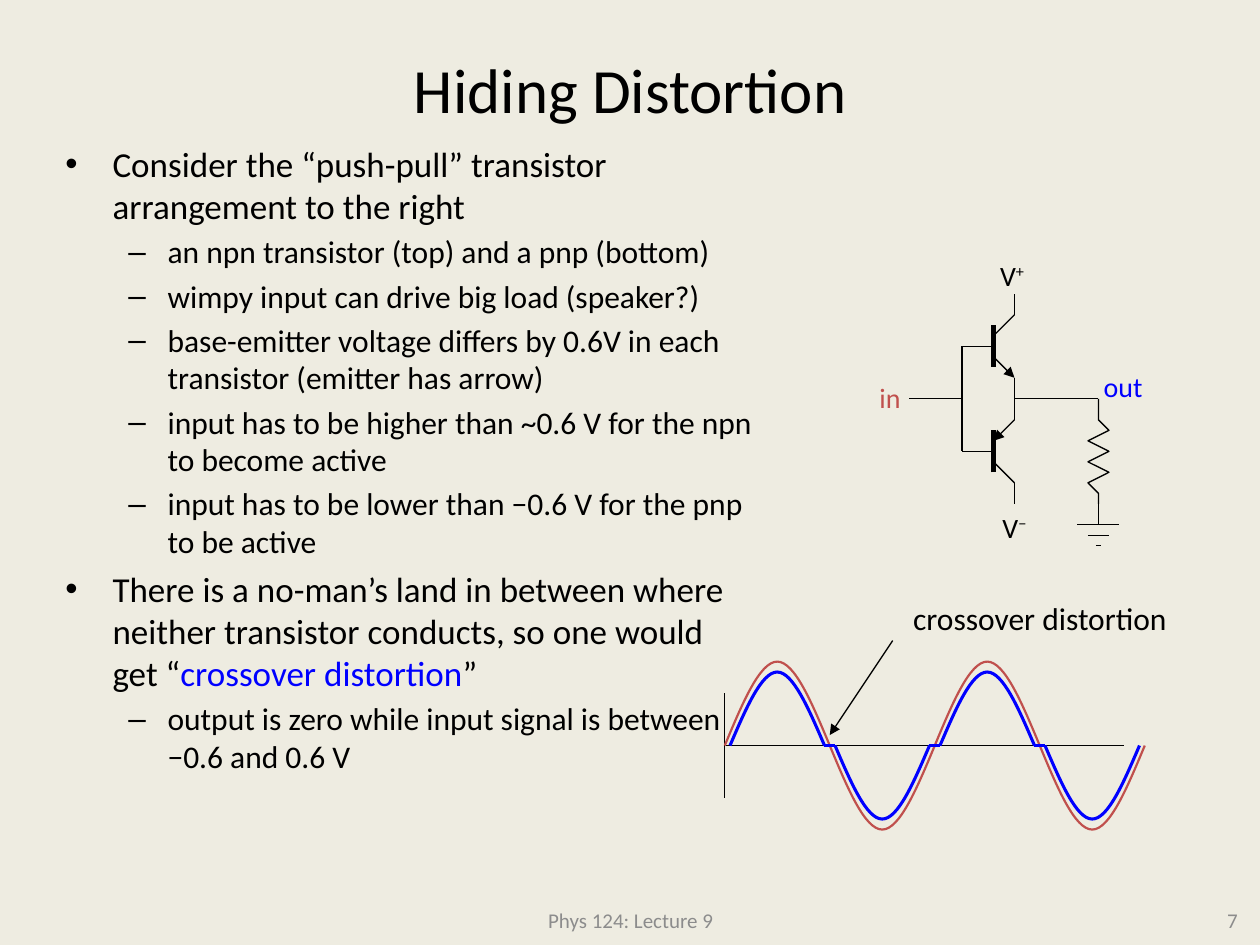
from dataclasses import dataclass

from lxml import etree
from pptx import Presentation
from pptx.dml.color import RGBColor
from pptx.enum.shapes import MSO_CONNECTOR
from pptx.enum.text import MSO_ANCHOR, MSO_AUTO_SIZE, PP_ALIGN
from pptx.oxml.ns import qn
from pptx.util import Cm, Pt

STRAIGHT = MSO_CONNECTOR.STRAIGHT
LEFT, CENTER, RIGHT = PP_ALIGN.LEFT, PP_ALIGN.CENTER, PP_ALIGN.RIGHT
TOP, MIDDLE = MSO_ANCHOR.TOP, MSO_ANCHOR.MIDDLE
FIT_SHAPE = MSO_AUTO_SIZE.SHAPE_TO_FIT_TEXT


@dataclass(frozen=True)
class Theme:
    font: str = "Calibri"
    background: str = "EEECE1"
    ink: str = "000000"
    muted: str = "8C8C8C"
    input: str = "C0504D"
    output: str = "0000FF"
    title_size: int = 36
    bullet_size: int = 20
    dash_size: int = 18
    label_size: int = 16
    footer_size: int = 12
    thin: float = 0.75
    input_width: float = 1.25
    output_width: float = 1.75
    bar_width: float = 3


THEME = Theme()
STEP = 2.54 / 12  # drawing grid in cm
CIRCUIT = (20.45, 8.04)  # node joining both emitters
WAVES = (14.61, 15.03)  # origin of the graph axes

BODY = [
    (0, ["Consider the “push-pull” transistor arrangement to the right"]),
    (1, ["an npn transistor (top) and a pnp (bottom)"]),
    (1, ["wimpy input can drive big load (speaker?)"]),
    (1, ["base-emitter voltage differs by 0.6V in each transistor (emitter has arrow)"]),
    (1, ["input has to be higher than ~0.6 V for the npn to become active"]),
    (1, ["input has to be lower than −0.6 V for the pnp to be active"]),
    (0, ["There is a no-man’s land in between where neither transistor conducts, "
         "so one would get “", ("crossover distortion", THEME.output), "”"]),
    (1, ["output is zero while input signal is between −0.6 and 0.6 V"]),
]


def grid_point(origin, point):
    """Turn grid steps from an origin into slide lengths."""
    return tuple(Cm(start + STEP * steps) for start, steps in zip(origin, point))


def add_run(paragraph, text, size, color=THEME.ink, superscript=False):
    run = paragraph.add_run()
    run.text = text
    run.font.name = THEME.font
    run.font.size = Pt(size)
    run.font.color.rgb = RGBColor.from_string(color)
    if superscript:
        run.font._element.set("baseline", "30000")


def add_text_frame(slide, box, anchor=TOP, wrap=True):
    frame = slide.shapes.add_textbox(*map(Cm, box)).text_frame
    frame.word_wrap = wrap
    frame.vertical_anchor = anchor
    return frame


def add_line_of_text(slide, box, text, size, color, align):
    paragraph = add_text_frame(slide, box, MIDDLE).paragraphs[0]
    paragraph.alignment = align
    add_run(paragraph, text, size, color)


def add_label(slide, box, text, size=THEME.label_size, color=THEME.ink, sign=""):
    frame = add_text_frame(slide, box, wrap=False)
    frame.auto_size = FIT_SHAPE
    paragraph = frame.paragraphs[0]
    paragraph.alignment = LEFT
    add_run(paragraph, text, size, color)
    if sign:
        add_run(paragraph, sign, size, color, superscript=True)


def set_bullet(paragraph, character, margin, hanging):
    properties = paragraph._p.get_or_add_pPr()
    properties.set("marL", str(Cm(margin)))
    properties.set("indent", str(-Cm(hanging)))
    etree.SubElement(properties, qn("a:buFont")).set("typeface", "Arial")
    etree.SubElement(properties, qn("a:buChar")).set("char", character)


def add_body(slide):
    frame = add_text_frame(slide, (1.07, 2.74, 14.4, 13.97))
    styles = [("•", 0.95, 0.95, THEME.bullet_size), ("–", 2.06, 0.79, THEME.dash_size)]
    for index, (level, parts) in enumerate(BODY):
        paragraph = frame.add_paragraph() if index else frame.paragraphs[0]
        character, margin, hanging, size = styles[level]
        paragraph.level = level
        paragraph.space_before = Pt(0.2 * size)
        set_bullet(paragraph, character, margin, hanging)
        for part in parts:
            text, color = (part, THEME.ink) if isinstance(part, str) else part
            add_run(paragraph, text, size, color)


def add_line(shapes, origin, start, end, color=THEME.ink, width=THEME.thin, arrow=False):
    connector = shapes.add_connector(
        STRAIGHT, *grid_point(origin, start), *grid_point(origin, end))
    connector.line.color.rgb = RGBColor.from_string(color)
    connector.line.width = Pt(width)
    if arrow:
        etree.SubElement(connector.line._get_or_add_ln(), qn("a:tailEnd")).set("type", "triangle")
    etree.SubElement(connector._element.spPr, qn("a:effectLst"))


def add_outline(shapes, origin, points, color=THEME.ink, width=THEME.thin):
    first, *others = [grid_point(origin, point) for point in points]
    builder = shapes.build_freeform(*first)
    builder.add_line_segments(others, close=False)
    shape = builder.convert_to_shape()
    shape.fill.background()
    shape.line.color.rgb = RGBColor.from_string(color)
    shape.line.width = Pt(width)
    shape.shadow.inherit = False
    return shape


def add_lobe(shapes, left, width, height, color, line_width):
    """Draw half a wave as two Bézier curves; a negative height points down."""
    heights = (0, 0.5, 1, 1, 1, 0.5, 0)
    points = [(left + width * i / 6, -height * part) for i, part in enumerate(heights)]
    shape = add_outline(shapes, WAVES, points, color, line_width)
    segments = shape._element.findall(".//" + qn("a:lnTo"))
    for first in (0, 3):
        curve = etree.Element(qn("a:cubicBezTo"))
        segments[first].addprevious(curve)
        for segment in segments[first:first + 3]:
            curve.append(segment[0])
            segment.getparent().remove(segment)


def add_transistor(slide, side, arrow_out):
    """Draw a transistor above (side -1) or below (side 1) the emitter node."""
    shapes = slide.shapes.add_group_shape().shapes
    add_line(shapes, CIRCUIT, (-2, 7 * side), (-2, 3 * side), width=THEME.bar_width)
    add_line(shapes, CIRCUIT, (-2, 6 * side), (0, 8 * side))
    emitter = [(-2, 4 * side), (0, 2 * side)]
    add_line(shapes, CIRCUIT, *(emitter if arrow_out else emitter[::-1]), arrow=True)
    for start, end in [((0, 8), (0, 10)), ((-2, 5), (-5, 5)), ((0, 2), (0, 0))]:
        add_line(shapes, CIRCUIT, (start[0], start[1] * side), (end[0], end[1] * side))


def add_circuit(slide):
    add_transistor(slide, -1, arrow_out=True)
    add_transistor(slide, 1, arrow_out=False)
    zigzag = [(9 if y % 2 else 7, y) for y in range(3, 9)]
    add_outline(slide.shapes, CIRCUIT, [(8, 0), (8, 2), *zigzag, (8, 9), (8, 10)])
    ground = slide.shapes.add_group_shape().shapes
    add_line(ground, CIRCUIT, (8, 10), (8, 12))
    for y, half in ((12, 2), (13, 1), (14, 0.25)):
        add_line(ground, CIRCUIT, (8 - half, y), (8 + half, y))
    for start, end in [((0, 0), (8, 0)), ((-5, -5), (-5, 5)), ((-5, 0), (-10, 0))]:
        add_line(slide.shapes, CIRCUIT, start, end)
    add_label(slide, (22, 7.32, 1.3, 0.94), "out", color=THEME.output)
    add_label(slide, (17.48, 7.54, 0.97, 0.94), "in", color=THEME.input)
    add_label(slide, (19.91, 5.08, 1.12, 0.94), "V", sign="+")
    add_label(slide, (19.96, 10.16, 1.09, 0.94), "V", sign="−")


def add_waves(slide):
    add_line(slide.shapes, WAVES, (0, -5), (0, 5))
    add_line(slide.shapes, WAVES, (0, 0), (38, 0))
    input_wave = slide.shapes.add_group_shape().shapes
    output_wave = slide.shapes.add_group_shape().shapes
    for half in range(4):
        sign = (-1) ** half
        left = 10 * half
        add_lobe(input_wave, left, 10, 8 * sign, THEME.input, THEME.input_width)
        add_lobe(output_wave, left + 0.5, 9, 7 * sign, THEME.output, THEME.output_width)
        if half:
            add_line(output_wave, WAVES, (left - 0.5, 0), (left + 0.5, 0),
                     THEME.output, THEME.output_width)
    add_line(slide.shapes, WAVES, (16, -10), (10, -1), arrow=True)
    add_label(slide, (18.16, 11.96, 6.02, 1.02), "crossover distortion", THEME.dash_size)


def main():
    presentation = Presentation()
    presentation.slide_width, presentation.slide_height = Cm(25.4), Cm(19.05)
    slide = presentation.slides.add_slide(presentation.slide_layouts[6])
    slide.background.fill.solid()
    slide.background.fill.fore_color.rgb = RGBColor.from_string(THEME.background)
    add_line_of_text(slide, (8.69, 18.03, 8.05, 1.02), "Phys 124: Lecture 9",
                     THEME.footer_size, THEME.muted, CENTER)
    add_line_of_text(slide, (19.28, 18.03, 5.92, 1.02), "7",
                     THEME.footer_size, THEME.muted, RIGHT)
    add_line_of_text(slide, (1.91, 0.2, 21.59, 3.18), "Hiding Distortion",
                     THEME.title_size, THEME.ink, CENTER)
    add_body(slide)
    add_circuit(slide)
    add_waves(slide)
    presentation.save("out.pptx")


if __name__ == "__main__":
    main()
